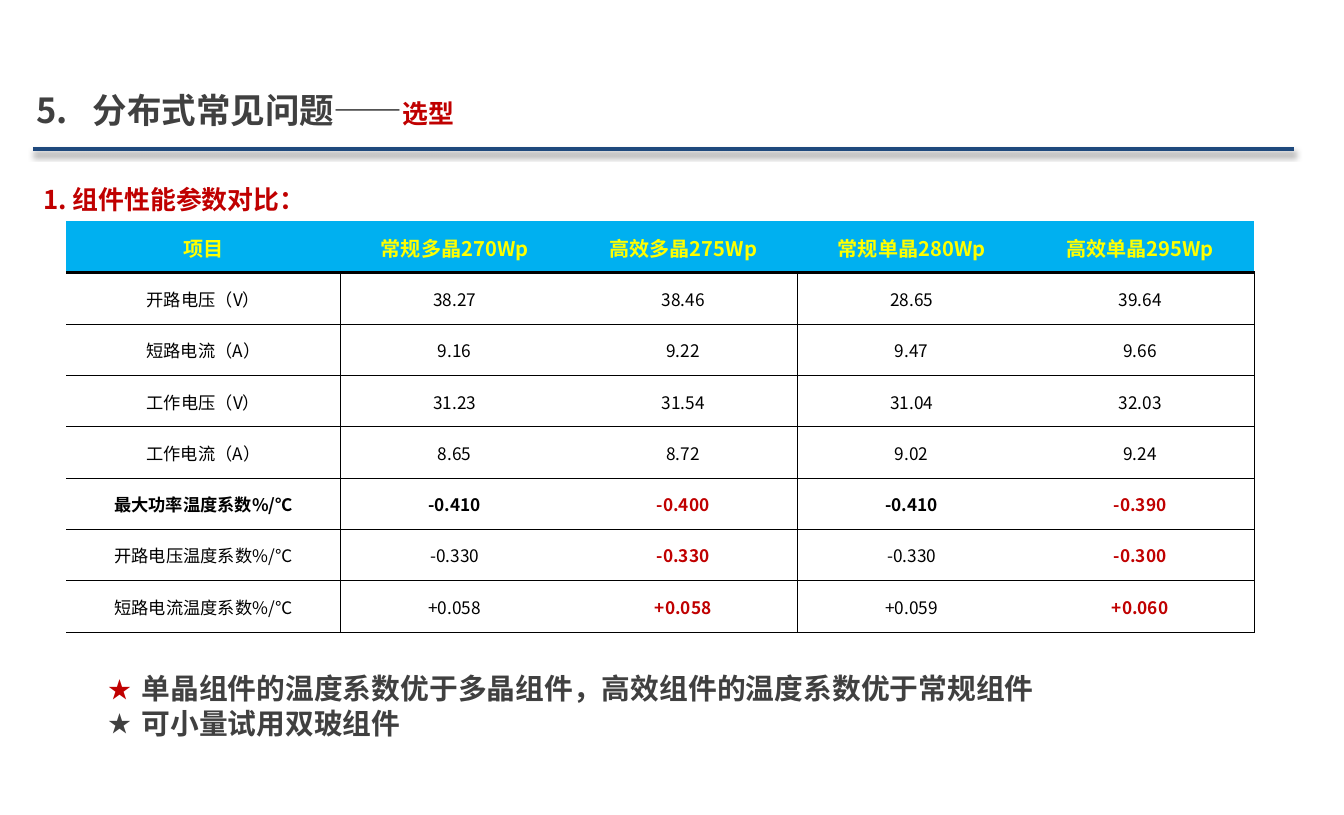
from lxml import etree
from pptx import Presentation
from pptx.dml.color import RGBColor
from pptx.enum.shapes import MSO_CONNECTOR
from pptx.enum.text import MSO_ANCHOR, MSO_AUTO_SIZE, PP_ALIGN
from pptx.oxml.ns import qn
from pptx.util import Cm, Pt

LEFT, CENTER = PP_ALIGN.LEFT, PP_ALIGN.CENTER
TOP, MIDDLE = MSO_ANCHOR.TOP, MSO_ANCHOR.MIDDLE
STRAIGHT = MSO_CONNECTOR.STRAIGHT
NO_AUTOFIT = MSO_AUTO_SIZE.NONE

NAVY = RGBColor(0x1F, 0x49, 0x7D)
GRAY = RGBColor(0x40, 0x40, 0x40)
RED = RGBColor(0xC0, 0x00, 0x00)
BLACK = RGBColor(0x00, 0x00, 0x00)
YELLOW = RGBColor(0xFF, 0xFF, 0x00)
SKY = RGBColor(0x00, 0xB0, 0xF0)

HEADER = ["项目", "常规多晶270Wp", "高效多晶275Wp", "常规单晶280Wp", "高效单晶295Wp"]
PARAMETERS = [
    ["开路电压（V）", "38.27", "38.46", "28.65", "39.64"],
    ["短路电流（A）", "9.16", "9.22", "9.47", "9.66"],
    ["工作电压（V）", "31.23", "31.54", "31.04", "32.03"],
    ["工作电流（A）", "8.65", "8.72", "9.02", "9.24"],
    ["最大功率温度系数%/℃", "-0.410", "-0.400", "-0.410", "-0.390"],
    ["开路电压温度系数%/℃", "-0.330", "-0.330", "-0.330", "-0.300"],
    ["短路电流温度系数%/℃", "+0.058", "+0.058", "+0.059", "+0.060"],
]
MAX_POWER_ROW = 5
HIGH_EFFICIENCY_COLS = (2, 4)
GROUP_END_COLS = (0, 2, 4)
THIN, THICK = 0.25, 2.25


def add_xml(parent, tag, **attrs):
    return etree.SubElement(parent, qn(tag), attrs)


class SlideBuilder:
    def __init__(self, slide, font):
        self.slide = slide
        self.font = font

    def run(self, p, text, size, color, bold=True):
        r = p.add_run()
        r.text = text
        r.font.size = Pt(size)
        r.font.bold = bold
        r.font.color.rgb = color
        r.font.name = self.font
        add_xml(r.font._element, "a:ea", typeface=self.font)

    def frame(self, sp, left, top, width, height):
        """Place a text shape and return its text frame."""
        sp.left, sp.top, sp.width, sp.height = Cm(left), Cm(top), Cm(width), Cm(height)
        tf = sp.text_frame
        tf.word_wrap = True
        tf.auto_size = NO_AUTOFIT
        tf.vertical_anchor = TOP
        return tf

    def title(self, number, text, accent, *box):
        p = self.frame(self.slide.shapes.title, *box).paragraphs[0]
        tabs = add_xml(p._p.get_or_add_pPr(), "a:tabLst")
        add_xml(tabs, "a:tab", pos=str(Cm(1.38)), algn="l")
        p.alignment = LEFT
        self.run(p, f"{number}\t{text}", 24, GRAY)
        self.run(p, accent, 18, RED)

    def heading(self, text, *box):
        sp = self.slide.shapes.add_textbox(0, 0, 0, 0)
        p = self.frame(sp, *box).paragraphs[0]
        p.line_spacing = 1.2
        self.run(p, text, 18, RED)

    def star_list(self, items, *box):
        tf = self.frame(self.slide.placeholders[1], *box)
        for i, (text, star_color) in enumerate(items):
            p = tf.add_paragraph() if i else tf.paragraphs[0]
            pPr = p._p.get_or_add_pPr()
            pPr.set("marL", str(Cm(0.81)))
            pPr.set("indent", str(-Cm(0.81)))
            add_xml(add_xml(pPr, "a:buClr"), "a:srgbClr", val=str(star_color))
            add_xml(pPr, "a:buSzPct", val="80000")
            add_xml(pPr, "a:buFont", typeface=self.font)
            add_xml(pPr, "a:buChar", char="★")
            p.space_before = Pt(0)
            self.run(p, text, 20, GRAY)

    def shadowed_rule(self, left, right, y):
        line = self.slide.shapes.add_connector(STRAIGHT, Cm(left), Cm(y), Cm(right), Cm(y))
        line.line.color.rgb = NAVY
        line.line.width = Pt(3)
        effects = add_xml(line._element.spPr, "a:effectLst")
        shadow = add_xml(effects, "a:outerShdw", blurRad=str(Pt(4)), dist=str(Pt(3)),
                         dir="5400000", rotWithShape="0")
        add_xml(add_xml(shadow, "a:srgbClr", val=str(BLACK)), "a:alpha", val="40000")

    def borders(self, cell, **widths):
        """Draw the sides L, R, T and B in points; a width of 0 hides the side."""
        tcPr = cell._tc.get_or_add_tcPr()
        for i, (side, width) in enumerate(widths.items()):
            ln = etree.Element(qn(f"a:ln{side}"), w=str(Pt(width)))
            if width:
                add_xml(add_xml(ln, "a:solidFill"), "a:srgbClr", val=str(BLACK))
            else:
                add_xml(ln, "a:noFill")
            tcPr.insert(i, ln)

    def cell(self, cell, text, size, color, bold, fill=None):
        cell.margin_left = cell.margin_right = cell.margin_top = Cm(0.03)
        cell.margin_bottom = 0
        cell.vertical_anchor = MIDDLE
        if fill is None:
            cell.fill.background()
        else:
            cell.fill.solid()
            cell.fill.fore_color.rgb = fill
        p = cell.text_frame.paragraphs[0]
        p.alignment = CENTER
        self.run(p, text, size, color, bold)

    def parameter_table(self, rows, left, top, col_widths, row_height):
        frame = self.slide.shapes.add_table(
            len(rows), len(col_widths), Cm(left), Cm(top),
            Cm(sum(col_widths)), Cm(row_height * len(rows)))
        table = frame.table
        table.first_row = table.horz_banding = False
        for column, width in zip(table.columns, col_widths):
            column.width = Cm(width)
        for r, values in enumerate(rows):
            table.rows[r].height = Cm(row_height)
            for c, text in enumerate(values):
                cell = table.cell(r, c)
                if r == 0:
                    self.cell(cell, text, 14, YELLOW, True, SKY)
                    self.borders(cell, L=0, R=0, T=0, B=THICK)
                    continue
                highlight = r >= MAX_POWER_ROW and c in HIGH_EFFICIENCY_COLS
                self.cell(cell, text, 12, RED if highlight else BLACK,
                          highlight or r == MAX_POWER_ROW)
                self.borders(cell, L=THIN if c - 1 in GROUP_END_COLS else 0,
                             R=THIN if c in GROUP_END_COLS else 0,
                             T=THICK if r == 1 else THIN, B=THIN)


def main():
    prs = Presentation()
    prs.slide_width, prs.slide_height = Cm(33), Cm(20.02)
    s = SlideBuilder(prs.slides.add_slide(prs.slide_layouts[1]), "Noto Sans CJK SC")
    s.shadowed_rule(0.81, 31.78, 3.66)
    s.title("5.", "分布式常见问题——", "选型", 0.64, 2.06, 16.28, 1.27)
    s.heading("1. 组件性能参数对比：", 0.81, 4.24, 27.58, 1.17)
    s.parameter_table([HEADER, *PARAMETERS], 1.63, 5.44, [6.73] + [5.61] * 4, 1.26)
    s.star_list([("单晶组件的温度系数优于多晶组件，高效组件的温度系数优于常规组件", RED),
                 ("可小量试用双玻组件", GRAY)], 2.41, 16.36, 24.2, 1.96)
    prs.save("out.pptx")


if __name__ == "__main__":
    main()
